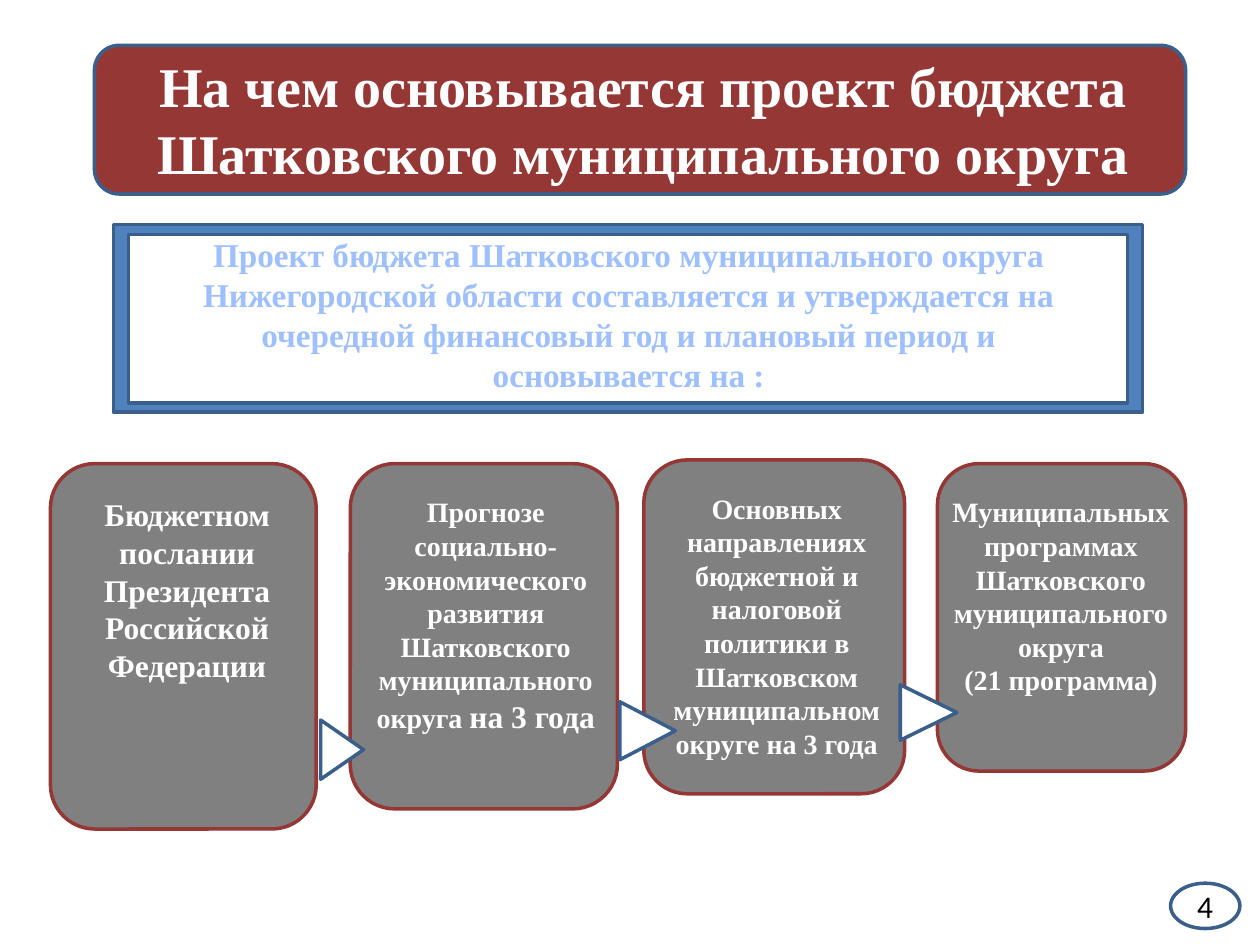
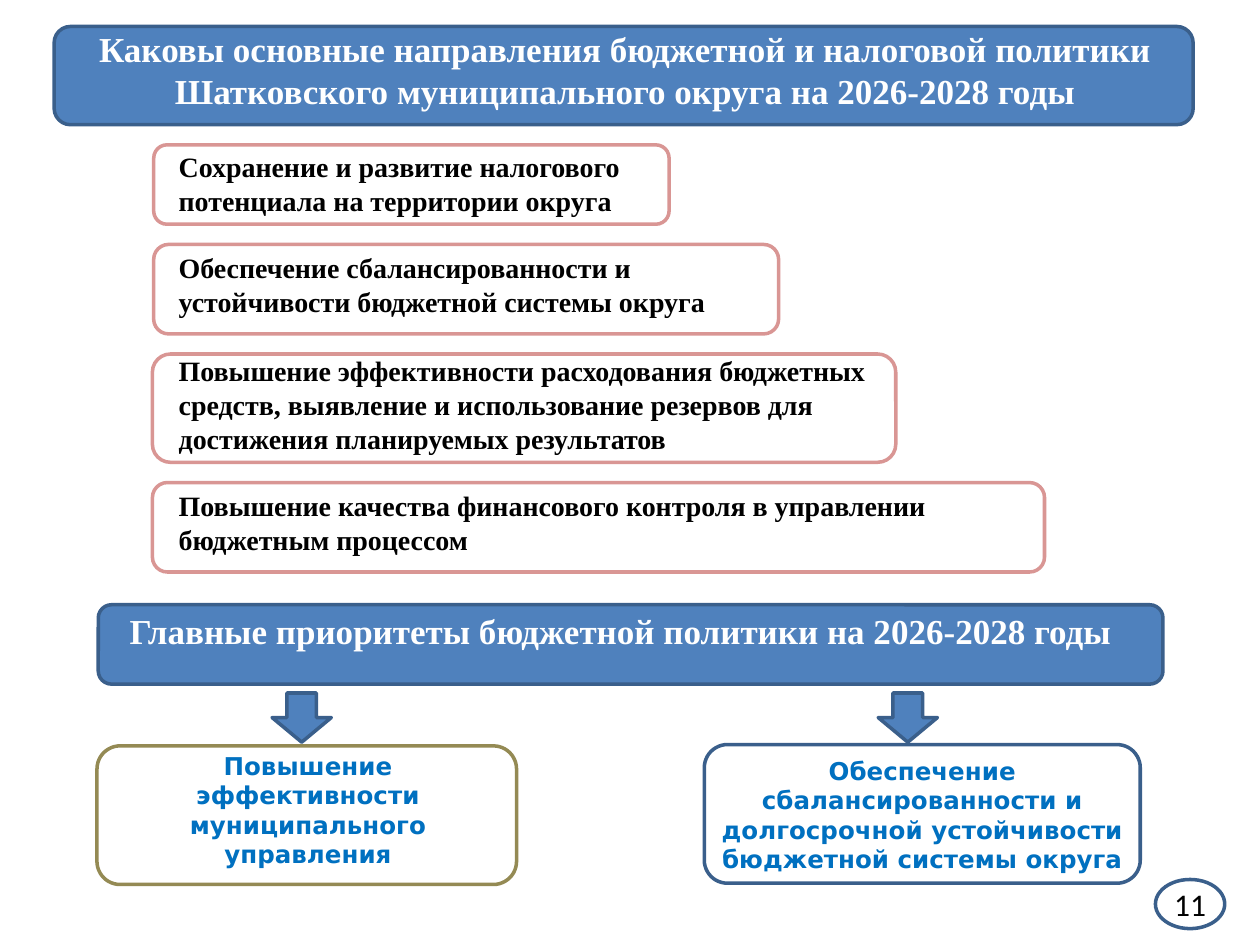
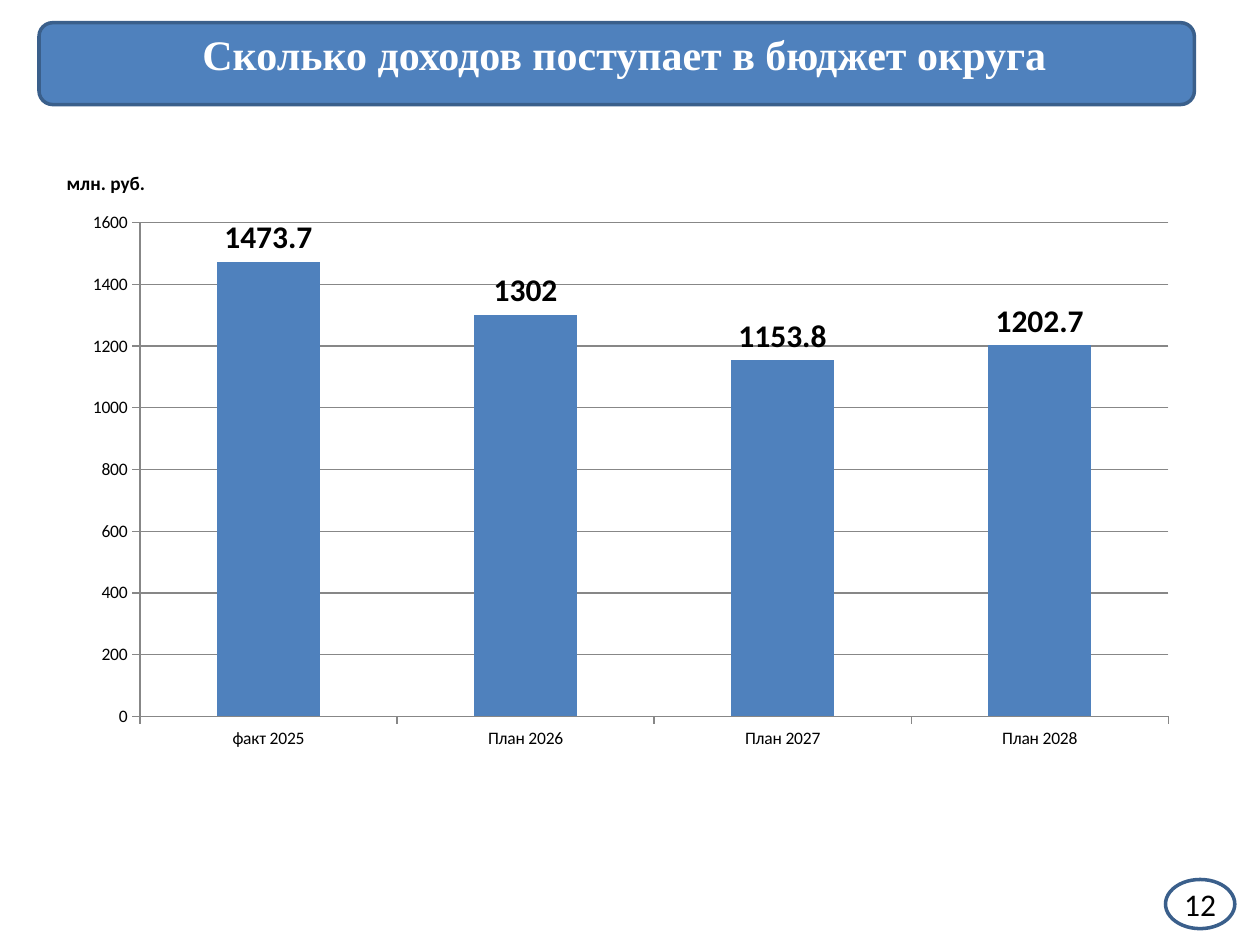
"""Build three slides on the budget of a municipal district."""
from dataclasses import dataclass

from pptx import Presentation
from pptx import util as u
from pptx.chart.data import CategoryChartData
from pptx.dml.color import RGBColor
from pptx.enum import chart as ch, shapes, text

Box = tuple[float, float, float, float]
COLORS = {
    "white": "FFFFFF", "black": "000000", "blue": "4F81BD", "navy": "3A5F8B",
    "red": "953735", "gray": "808080", "pink": "D99694", "olive": "948A54",
    "pale": "9FC0FF", "sky": "0070C0", "axis": "878787",
}
SERIF, SANS, WIDE = "Times New Roman", "Calibri", "DejaVu Sans"
KIND = shapes.MSO_SHAPE


@dataclass
class Panel:
    """An outlined preset shape."""
    box: Box
    fill: str = "white"
    line: str = "navy"
    kind: KIND = KIND.ROUNDED_RECTANGLE
    rotation: float = 0


@dataclass
class Label:
    """A text box whose paragraphs hold runs of text and size."""
    box: Box
    paragraphs: list[list[tuple[str, float]]]
    color: str = "white"
    font: str = SERIF
    centered: bool = True


def rgb(name: str) -> RGBColor:
    """Return a palette colour."""
    return RGBColor.from_string(COLORS[name])


def inches(box: Box) -> list[u.Length]:
    """Convert a box to lengths."""
    return [u.Inches(v) for v in box]


def style(font, size: float, color: str, name: str, bold: bool = False) -> None:
    """Set the look of a font."""
    font.size, font.name, font.bold = u.Pt(size), name, bold
    font.color.rgb = rgb(color)


def draw_panel(s, panel: Panel):
    """Draw a panel and return its shape."""
    sp = s.shapes.add_shape(panel.kind, *inches(panel.box))
    sp.shadow.inherit = False
    sp.rotation = panel.rotation
    sp.fill.solid()
    sp.fill.fore_color.rgb = rgb(panel.fill)
    sp.line.color.rgb = rgb(panel.line)
    sp.line.width = u.Pt(2)
    return sp


def draw_label(s, label: Label) -> None:
    """Draw a bold wrapped label."""
    tf = s.shapes.add_textbox(*inches(label.box)).text_frame
    tf.word_wrap = True
    tf.auto_size = text.MSO_AUTO_SIZE.SHAPE_TO_FIT_TEXT
    for i, runs in enumerate(label.paragraphs):
        p = tf.add_paragraph() if i else tf.paragraphs[0]
        p.alignment = text.PP_ALIGN.CENTER if label.centered else text.PP_ALIGN.LEFT
        style(p.font, runs[0][1], label.color, label.font, True)
        for words, size in runs:
            r = p.add_run()
            r.text = words
            if size != runs[0][1]:
                r.font.size = u.Pt(size)


def draw_band(s, box: Box, label_box: Box, words: str, size: float,
              fill: str = "blue") -> None:
    """Draw a heading band with its words."""
    draw_panel(s, Panel(box, fill))
    draw_label(s, Label(label_box, [[(words, size)]]))


def draw_badge(s, box: Box, number: int) -> None:
    """Draw the page number in an ellipse."""
    tf = draw_panel(s, Panel(box, kind=KIND.OVAL)).text_frame
    tf.margin_left = tf.margin_right = tf.margin_top = tf.margin_bottom = 0
    tf.word_wrap = False
    p = tf.paragraphs[0]
    p.text = str(number)
    p.alignment = text.PP_ALIGN.CENTER
    style(p.font, 18, "black", SANS)


def build_basis(s) -> None:
    """Show what the draft budget rests on."""
    draw_band(s, (0.75, 0.36, 8.66, 1.18), (1.09, 0.36, 8.03, 1.16),
              "На чем основывается проект бюджета Шатковского муниципального округа",
              32, "red")
    draw_panel(s, Panel((0.9, 1.78, 8.17, 1.49), "blue", kind=KIND.RECTANGLE))
    draw_panel(s, Panel((1.02, 1.86, 7.93, 1.34), kind=KIND.RECTANGLE))
    draw_label(s, Label((1.14, 1.81, 7.7, 1.36), [[(
        "Проект бюджета Шатковского муниципального округа Нижегородской области "
        "составляется и утверждается на очередной финансовый год и плановый период "
        "и основывается на :", 19)]], "pale"))
    cards = [
        ((0.4, 3.68, 2.11, 2.9), (0.5, 3.88, 1.97, 1.6),
         [[("Бюджетном послании Президента Российской Федерации", 18)]]),
        ((2.78, 3.68, 2.12, 2.74), (2.83, 3.88, 2.05, 2),
         [[("Прогнозе социально-экономического развития Шатковского "
            "муниципального округа ", 16), ("на 3 года", 18)]]),
        ((5.11, 3.65, 2.07, 2.65), (5.16, 3.85, 2.01, 2.23),
         [[("Основных направлениях бюджетной и налоговой политики в Шатковском "
            "муниципальном округе на 3 года", 16)]]),
        ((7.44, 3.68, 1.97, 2.44), (7.28, 3.88, 2.28, 1.7),
         [[("Муниципальных программах Шатковского муниципального округа", 16)],
          [("(21 программа)", 16)]]),
    ]
    for box, label_box, paragraphs in cards:
        draw_panel(s, Panel(box, "gray", "red"))
        draw_label(s, Label(label_box, paragraphs))
    for box in ((2.48, 5.78, 0.47, 0.34), (4.91, 5.58, 0.46, 0.44),
                (7.15, 5.43, 0.44, 0.45)):
        draw_panel(s, Panel(box, kind=KIND.ISOSCELES_TRIANGLE, rotation=90))
    draw_badge(s, (9.29, 7.01, 0.55, 0.36), 4)


def build_policy(s) -> None:
    """Show the directions and priorities of budget policy."""
    draw_badge(s, (9.17, 6.98, 0.55, 0.39), 11)
    draw_band(s, (0.43, 0.21, 9.04, 0.78), (0.55, 0.17, 8.82, 0.76),
              "Каковы основные направления бюджетной и налоговой политики "
              "Шатковского муниципального округа на 2026-2028 годы", 20)
    directions = [
        ((1.22, 1.15, 4.09, 0.63), (1.32, 1.14, 3.93, 0.63),
         "Сохранение и развитие налогового потенциала на территории округа"),
        ((1.22, 1.94, 4.96, 0.71), (1.32, 1.94, 4.86, 0.63),
         "Обеспечение сбалансированности и устойчивости бюджетной системы округа"),
        ((1.21, 2.81, 5.9, 0.86), (1.32, 2.76, 5.73, 0.9),
         "Повышение эффективности расходования бюджетных средств, выявление и "
         "использование резервов для достижения планируемых результатов"),
        ((1.21, 3.83, 7.08, 0.71), (1.32, 3.83, 6.91, 0.63),
         "Повышение качества финансового контроля в управлении бюджетным процессом"),
    ]
    for box, label_box, words in directions:
        draw_panel(s, Panel(box, line="pink"))
        draw_label(s, Label(label_box, [[(words, 16)]], "black", centered=False))
    draw_band(s, (0.78, 4.8, 8.45, 0.63), (0.38, 4.79, 9.09, 0.43),
              "Главные приоритеты бюджетной политики на 2026-2028 годы", 20)
    priorities = [
        (2.16, (0.77, 5.92, 3.33, 1.1), "olive", (0.83, 5.91, 3.23, 1.03),
         "Повышение эффективности муниципального управления"),
        (6.97, (5.59, 5.91, 3.46, 1.1), "navy", (5.59, 5.95, 3.46, 1.03),
         "Обеспечение сбалансированности и долгосрочной устойчивости "
         "бюджетной системы округа"),
    ]
    for arrow_left, box, line, label_box, words in priorities:
        draw_panel(s, Panel((arrow_left, 5.5, 0.47, 0.39), "blue", kind=KIND.DOWN_ARROW))
        draw_panel(s, Panel(box, line=line))
        draw_label(s, Label(label_box, [[(words, 14)]], "sky", WIDE))


def build_income(s) -> None:
    """Chart the income of the district by year."""
    draw_badge(s, (9.25, 6.98, 0.55, 0.39), 12)
    draw_band(s, (0.31, 0.18, 9.17, 0.65), (0.43, 0.18, 9.05, 0.5),
              "Сколько доходов поступает в бюджет округа", 24)
    draw_label(s, Label((0.43, 1.31, 0.86, 0.28), [[("млн. руб.", 11)]],
                        "black", SANS, False))
    data = CategoryChartData()
    data.categories = ["факт 2025", "План 2026", "План 2027", "План 2028"]
    data.add_series("Доходы", (1473.7, 1302, 1153.8, 1202.7))
    chart = s.shapes.add_chart(ch.XL_CHART_TYPE.COLUMN_CLUSTERED,
                               *inches((0.56, 1.6, 8.89, 4.43)), data).chart
    chart.has_legend = chart.has_title = False
    style(chart.font, 10, "black", SANS)
    chart.value_axis.has_major_gridlines = True
    chart.value_axis.minimum_scale = 0
    chart.value_axis.maximum_scale = 1600
    chart.value_axis.major_unit = 200
    for item in (chart.category_axis, chart.value_axis, chart.value_axis.major_gridlines):
        item.format.line.color.rgb = rgb("axis")
        item.format.line.width = u.Pt(0.75)
    plot = chart.plots[0]
    plot.gap_width = 150
    plot.vary_by_categories = False
    fill = plot.series[0].format.fill
    fill.solid()
    fill.fore_color.rgb = rgb("blue")
    labels = plot.series[0].data_labels
    labels.show_value = True
    labels.position = ch.XL_LABEL_POSITION.OUTSIDE_END
    style(labels.font, 18, "black", SANS, True)


def main() -> None:
    """Build and save the slides."""
    prs = Presentation()
    prs.slide_width, prs.slide_height = u.Inches(10), u.Inches(7.5)
    for build in (build_basis, build_policy, build_income):
        build(prs.slides.add_slide(prs.slide_layouts[6]))
    prs.save("out.pptx")


if __name__ == "__main__":
    main()
